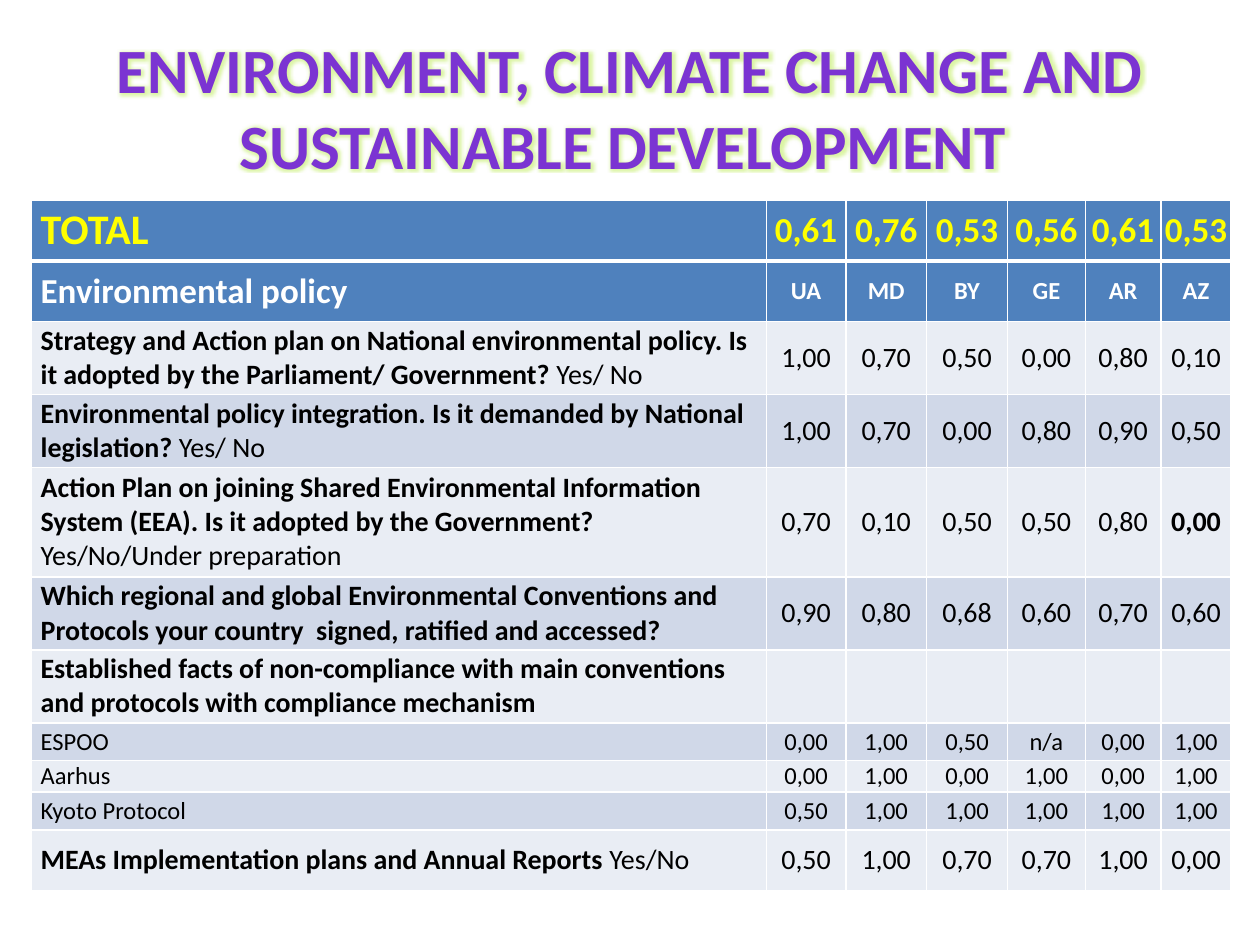
from dataclasses import dataclass

from lxml.etree import SubElement
from pptx import Presentation
from pptx.dml.color import RGBColor as Color
from pptx.enum.text import MSO_ANCHOR as Anchor, PP_ALIGN as Align
from pptx.oxml import parse_xml
from pptx.oxml.ns import nsdecls, qn
from pptx.util import Cm, Pt


@dataclass(frozen=True)
class Theme:
    font: str = "Calibri"
    title: str = "7B34D2"
    glow: str = "B8EA4A"
    header: str = "4F81BD"
    light: str = "E9EDF4"
    dark: str = "D0D8E8"
    total: str = "FFFF00"
    white: str = "FFFFFF"
    black: str = "000000"
    title_size: int = 36
    total_size: int = 24
    heading_size: int = 20
    body_size: int = 16
    small_size: int = 14


THEME = Theme()
TITLE = "ENVIRONMENT, CLIMATE CHANGE AND SUSTAINABLE DEVELOPMENT "
COLUMN_WIDTHS = (14.81, 1.6, 1.63, 1.63, 1.57, 1.52, 1.42)
TOTALS = ("0,61", "0,76", "0,53", "0,56", "0,61", "0,53")
COUNTRIES = ("UA", "MD", "BY", "GE", "AR", "AZ")
INDICATORS = (
    (1.47, "Strategy and Action plan on National environmental policy. "
     "Is it adopted by the Parliament/ Government? ", "Yes/ No",
     "1,00 0,70 0,50 0,00 0,80 0,10"),
    (1.47, "Environmental policy integration. "
     "Is it demanded by National legislation? ", "Yes/ No",
     "1,00 0,70 0,00 0,80 0,90 0,50"),
    (2.21, "Action Plan on joining Shared Environmental Information System "
     "(EEA). Is it adopted by the Government?", "  Yes/No/Under preparation",
     "0,70 0,10 0,50 0,50 0,80 0,00"),
    (1.47, "Which regional and global Environmental Conventions and Protocols "
     "your country  signed, ratified and accessed?", "",
     "0,90 0,80 0,68 0,60 0,70 0,60"),
    (1.47, "Established facts of non-compliance with main conventions "
     "and protocols with compliance mechanism", "", ""),
    (0.76, "", "ESPOO", "0,00 1,00 0,50 n/a 0,00 1,00"),
    (0.64, "", "Aarhus", "0,00 1,00 0,00 1,00 0,00 1,00"),
    (0.76, "", "Kyoto Protocol", "0,50 1,00 1,00 1,00 1,00 1,00"),
    (1.22, "MEAs Implementation plans and Annual Reports ", "Yes/No",
     "0,50 1,00 0,70 0,70 1,00 0,00"),
)
HIGHLIGHTED = (4, 6)


def add_span(para, text, *, size, color=THEME.black, bold=False):
    span = para.add_run()
    span.text = text
    span.font.name = THEME.font
    span.font.size = Pt(size)
    span.font.bold = bold
    span.font.color.rgb = Color.from_string(color)
    return span


def add_glow(span, color):
    fill = span.font._element.find(qn("a:solidFill"))
    fill.addnext(parse_xml(
        f'<a:effectLst {nsdecls("a")}><a:glow rad="53100">'
        f'<a:srgbClr val="{color}"><a:alpha val="50000"/></a:srgbClr>'
        '</a:glow></a:effectLst>'))


def add_title(page):
    box = page.shapes.add_textbox(Cm(1.27), Cm(0.76), Cm(22.86), Cm(2.77))
    frame = box.text_frame
    frame.word_wrap = True
    frame.vertical_anchor = Anchor.MIDDLE
    para = frame.paragraphs[0]
    para.alignment = Align.CENTER
    span = add_span(para, TITLE, size=THEME.title_size,
                    color=THEME.title, bold=True)
    add_glow(span, THEME.glow)


def set_borders(cell, **widths):
    properties = cell._tc.get_or_add_tcPr()
    for side in "LRTB":
        width = Pt(widths.get(side, 1))
        line = SubElement(properties, qn(f"a:ln{side}"), w=str(width))
        fill = SubElement(line, qn("a:solidFill"))
        SubElement(fill, qn("a:srgbClr"), val=THEME.white)


def style_cell(cell, fill, *, margin=0.18, align=Align.CENTER, **borders):
    set_borders(cell, **borders)
    cell.fill.solid()
    cell.fill.fore_color.rgb = Color.from_string(fill)
    cell.vertical_anchor = Anchor.MIDDLE
    cell.margin_left = cell.margin_right = Cm(margin)
    cell.margin_top = cell.margin_bottom = Cm(0)
    para = cell.text_frame.paragraphs[0]
    para.alignment = align
    return para


def fill_header(cells, label, values, *, label_size, size, color, margin, **borders):
    for column, (cell, text) in enumerate(zip(cells, (label, *values))):
        first = column == 0
        para = style_cell(cell, THEME.header, margin=0.18 if first else margin,
                          align=Align.LEFT if first else Align.CENTER, **borders)
        add_span(para, text, size=label_size if first else size,
                 color=color, bold=True)


def fill_indicator(cells, index, question, answer, values):
    fill = THEME.dark if index % 2 else THEME.light
    size = THEME.body_size if question else THEME.small_size
    label, *scores = cells
    para = style_cell(label, fill, align=Align.LEFT)
    for text, bold in ((question, True), (answer, False)):
        if text:
            add_span(para, text, size=size, bold=bold)
    for cell in scores:
        style_cell(cell, fill)
    for column, (cell, value) in enumerate(zip(scores, values.split()), 1):
        add_span(cell.text_frame.paragraphs[0], value, size=size,
                 bold=(index + 2, column) == HIGHLIGHTED)


def add_scores(page):
    heights = (1.22, 1.22, *(row[0] for row in INDICATORS))
    table = page.shapes.add_table(
        len(heights), len(COLUMN_WIDTHS), Cm(0.64), Cm(4.04),
        Cm(sum(COLUMN_WIDTHS)), Cm(sum(heights))).table
    for column, width in zip(table.columns, COLUMN_WIDTHS):
        column.width = Cm(width)
    for row, height in zip(table.rows, heights):
        row.height = Cm(height)
    total, heading, *body = (row.cells for row in table.rows)
    fill_header(total, "TOTAL", TOTALS, label_size=THEME.total_size,
                size=THEME.heading_size, color=THEME.total, margin=0, B=3)
    fill_header(heading, "Environmental policy", COUNTRIES,
                label_size=THEME.heading_size, size=THEME.small_size,
                color=THEME.white, margin=0.18, T=3)
    for index, (cells, (_, *content)) in enumerate(zip(body, INDICATORS)):
        fill_indicator(cells, index, *content)


def main():
    deck = Presentation()
    deck.slide_width, deck.slide_height = Cm(25.4), Cm(19.05)
    page = deck.slides.add_slide(deck.slide_layouts[6])
    add_title(page)
    add_scores(page)
    deck.save("out.pptx")


if __name__ == "__main__":
    main()
